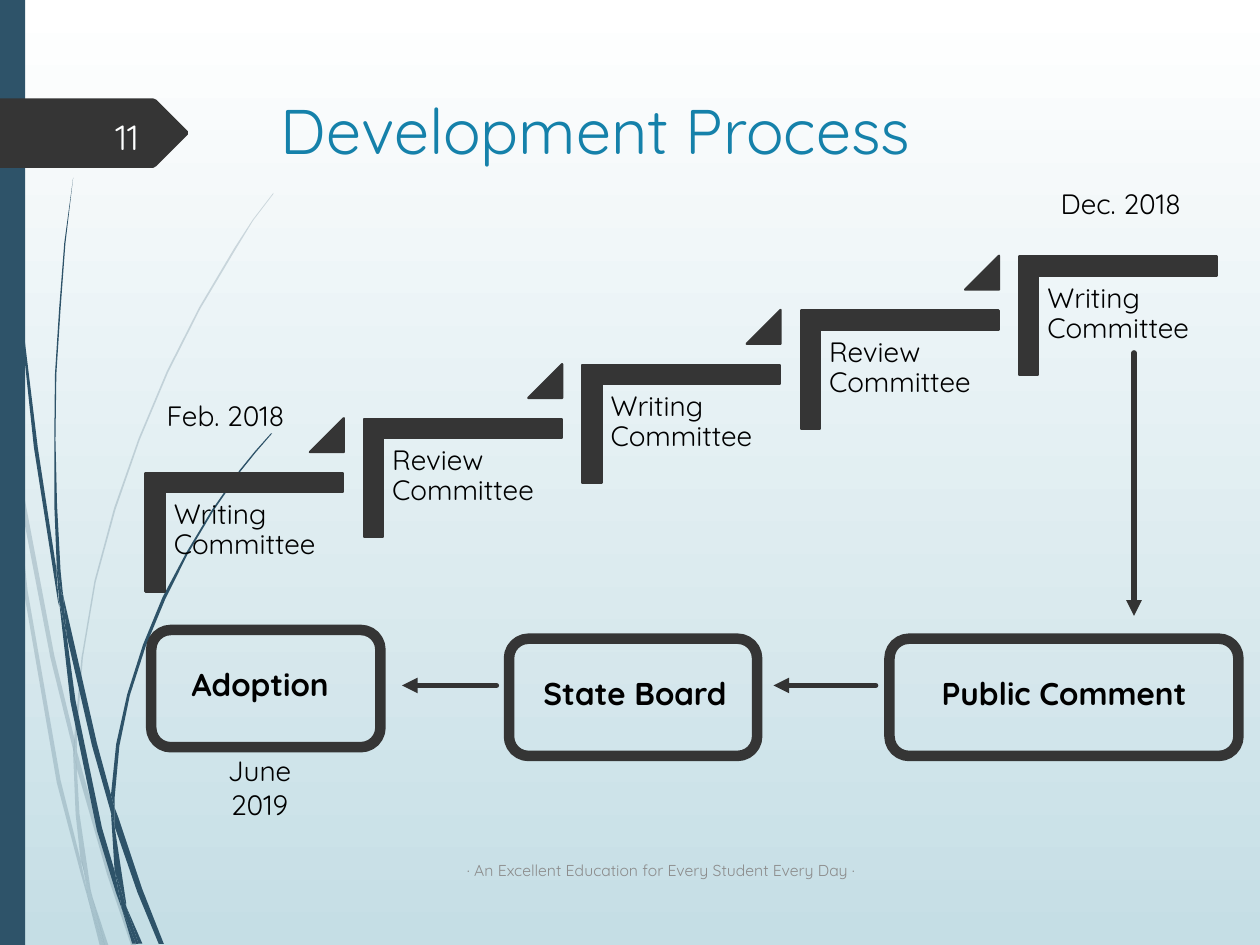
from pptx import Presentation
from pptx import util as u
from pptx.dml.color import RGBColor
from pptx.enum import shapes, text
from pptx.oxml import parse_xml
from pptx.oxml.ns import nsdecls

Pt = u.Pt
SHAPE = shapes.MSO_SHAPE
ALIGN = text.PP_ALIGN
ANCHOR = text.MSO_ANCHOR
COLORS = {
    "navy": "2E5369", "dark": "353535", "arrow": "333333", "title": "1581AA",
    "text": "000000", "number": "FEFFFF", "footer": "8C8C8C",
    "top": "FFFFFF", "bottom": "C5DEE5",
}

# Outlines of the grass blades, as x, y pairs
PALE_BLADES = [
    [5.8, 252, 4.3, 231.8, 0, 203, 0, 215.3, 5, 247.7],
    [28.8, 375.8, 42.5, 431.3, 42.5, 421.9, 31, 374.4, 7.2, 248.4, 8.6, 270.7],
    [46.1, 437, 43.9, 429.1, 43.9, 439.2, 61.2, 499.7, 74.9, 540, 77.8, 540,
     63.4, 498.2],
    [59.8, 540, 61.9, 540, 52.6, 511.9],
    [46.1, 491.8, 34.6, 445.7, 15.8, 337.7, 8.6, 270.7, 5.8, 252, 13.7, 338.4,
     32.4, 447.1, 46.1, 499, 50.4, 514.1, 49.7, 509],
    [41.8, 431.3, 43.2, 465.1, 46.1, 491.8, 48.2, 498.2, 52.6, 511.9,
     51.8, 508.3, 45.4, 465.1, 43.9, 439.2, 43.9, 437.8],
    [43.9, 420.5, 47.4, 375.8, 54.7, 332.6, 66, 291.2, 79.9, 251.3, 96.1, 212.8,
     114.5, 176.4, 134.6, 142.6, 144.7, 126, 156.2, 110.9, 156.2, 110.2,
     144.4, 125.6, 133.9, 141.8, 113.8, 175.7, 95.4, 212, 79.2, 250.6,
     65.2, 290.4, 54, 331.9, 46.6, 375.7, 42.5, 420.5, 42.5, 421.9, 43.9, 429.1],
    [50.4, 514.1, 56.9, 540, 59, 540],
    [43.9, 437.8, 43.9, 439.2, 43.9, 429.1, 42.5, 421.9, 41.8, 431.3],
    [48.2, 498.2, 46.8, 491.8, 49.7, 509, 50.4, 514.1, 59, 540, 59.8, 540,
     52.6, 511.9],
]
DARK_BLADES = [
    [3.6, 79.2, 10.1, 167.8, 19.4, 255.6, 33.1, 343.4, 33.8, 346.3, 32.4, 329,
     32.4, 326.2, 21.6, 255.6, 10.8, 167, 4.3, 78.5, 2.9, 34.6, 2.2, 0, 1.4, 0,
     2.2, 34.6],
    [52.6, 426.2, 63.4, 464.4, 63.4, 455.8, 63.4, 454.3, 55.4, 424.8,
     36, 339.8, 38.2, 363.6],
    [67.7, 467.3, 65.5, 461.5, 65.5, 472.3, 78.5, 509.8, 90.7, 539.3,
     93.6, 539.3, 81.4, 508.3],
    [65.5, 497.5, 58.3, 473, 43.2, 400.3, 38.2, 363.6, 33.8, 343.4, 40.3, 401,
     55.4, 474.5, 66.2, 509.8, 69.8, 519.8, 69.1, 516.2],
    [36, 339.8, 34.6, 326.2, 32.6, 288.7, 31.7, 251.3, 32.2, 213.8, 34.6, 176.4,
     37.4, 139, 41.8, 101.5, 36.7, 139, 33.8, 176.4, 31.4, 213.8, 31, 251.3,
     31, 288, 32.4, 323.3, 35.3, 339.8],
    [79.2, 539.3, 81.4, 539.3, 72, 517.7],
    [33.8, 343.4, 38.2, 363.6, 36, 339.8, 35.3, 339.8, 32.4, 323.3, 32.4, 326.2],
    [65.5, 455.8, 68.2, 426.3, 74.2, 397.4, 83.2, 369.5, 94.3, 342.7,
     107.2, 316.7, 121.7, 292.3, 137.5, 269.3, 146.2, 258.5, 155.5, 247.7,
     154.8, 247.7, 145.8, 257.8, 137, 268.6, 121, 291.6, 106.4, 315.9,
     92.9, 341.3, 81.7, 368.5, 72.7, 396.7, 66.4, 425.2, 63.4, 454.3,
     65.5, 461.5],
    [69.8, 519.8, 75.6, 539.3, 77.8, 539.3],
    [63.4, 464.4, 65.5, 497.5, 69.1, 508.3, 72, 517.7, 72, 515.5, 65.5, 472.3,
     64.8, 468.7],
    [63.4, 464.4, 64.8, 468.7, 65.5, 472.3, 65.5, 461.5, 63.4, 454.3],
    [69.1, 508.3, 65.5, 497.5, 69.1, 516.2, 69.8, 519.8, 77.8, 539.3,
     79.2, 539.3, 72, 517.7],
]
FLAG = [0, 56.2, 87.5, 56.2, 89.3, 57, 107.3, 74.9, 107.3, 77, 89.3, 95,
        87.5, 96, 0, 96]


def rgb(name):
    return RGBColor.from_string(COLORS[name])


class Deck:
    """Holds the text style and the slide being drawn."""
    font = {"name": "Quicksand", "size": Pt(16), "bold": False}

    def __init__(self, width, height):
        self.prs = Presentation()
        self.prs.slide_width, self.prs.slide_height = Pt(width), Pt(height)
        self.s = self.prs.slides.add_slide(self.prs.slide_layouts[6])

    def background(self, *names):
        fill = self.s.background.fill
        fill.gradient()
        fill.gradient_angle = 270
        for stop, name in zip(fill.gradient_stops, names):
            stop.color.rgb = rgb(name)

    def paint(self, sp, fill=None, line=None, width=1.25):
        sp.shadow.inherit = False
        if fill:
            sp.fill.solid()
            sp.fill.fore_color.rgb = rgb(fill)
        else:
            sp.fill.background()
        if line:
            sp.line.color.rgb = rgb(line)
            sp.line.width = Pt(width)
        else:
            sp.line.fill.background()

    def outline(self, flat, fill, alpha=None):
        """Draw a closed polygon from a flat x, y list; alpha is a percentage."""
        points = [(Pt(x), Pt(y)) for x, y in zip(flat[::2], flat[1::2])]
        fb = self.s.shapes.build_freeform(*points[0], scale=1)
        fb.add_line_segments(points[1:], close=True)
        sp = fb.convert_to_shape()
        self.paint(sp, fill)
        if alpha:
            color = sp._element.spPr.find(".//{*}srgbClr")
            color.append(parse_xml(
                f'<a:alpha {nsdecls("a")} val="{alpha * 1000}"/>'))

    def shape(self, kind, box, adjust=(), rotation=0, **style):
        sp = self.s.shapes.add_shape(kind, *map(Pt, box))
        sp.rotation = rotation
        for i, value in enumerate(adjust):
            sp.adjustments[i] = value
        self.paint(sp, **style)

    def label(self, words, box, color="text", align=ALIGN.CENTER,
              anchor=ANCHOR.TOP, inset=None, spacing=None, **font):
        tf = self.s.shapes.add_textbox(*map(Pt, box)).text_frame
        tf.word_wrap, tf.vertical_anchor = True, anchor
        if inset is not None:
            for side in ("left", "right", "top", "bottom"):
                setattr(tf, f"margin_{side}", Pt(inset))
        p = tf.paragraphs[0]
        p.alignment, p.line_spacing = align, spacing
        r = p.add_run()
        r.text = words
        for key, value in {**self.font, **font}.items():
            setattr(r.font, key, value)
        r.font.color.rgb = rgb(color)

    def arrow(self, *ends):
        c = self.s.shapes.add_connector(shapes.MSO_CONNECTOR.STRAIGHT,
                                        *map(Pt, ends))
        c.line.color.rgb = rgb("arrow")
        c.line.width = Pt(3)
        ln = c.line._get_or_add_ln()
        ln.set("cap", "rnd")
        ln.append(parse_xml(f'<a:tailEnd {nsdecls("a")} type="triangle"/>'))
        c._element.spPr.append(parse_xml(f'<a:effectLst {nsdecls("a")}/>'))


def main():
    d = Deck(720, 540)
    d.background("top", "bottom")
    for blade in PALE_BLADES:
        d.outline(blade, "navy", 20)
    for blade in DARK_BLADES:
        d.outline(blade, "navy")
    d.shape(SHAPE.RECTANGLE, (0, 0, 14.4, 540), fill="navy")
    d.outline(FLAG, "dark")
    d.label("11", (40.3, 63.4, 46.1, 28.8), "number", ALIGN.RIGHT,
            ANCHOR.MIDDLE, size=Pt(20))
    d.label("Development Process", (153.4, 49, 519, 59), "title", ALIGN.LEFT,
            size=Pt(36))

    solid = {"fill": "dark", "line": "dark"}
    reviewers = ["Writing", "Review", "Writing", "Review", "Writing"]
    for i, who in enumerate(reviewers):
        x, y = 124.8 * i, -30.95 * i
        d.shape(SHAPE.CORNER, (105.8 + x, 247.7 + y, 67.7, 113),
                (0.161, 0.161), 90, **solid)
        d.label(f"{who} Committee", (94.3 + x, 281 + y, 102.2, 89.3),
                align=ALIGN.LEFT, inset=5.04, spacing=0.9)
        if i < len(reviewers) - 1:
            d.shape(SHAPE.ISOSCELES_TRIANGLE,
                    (177.1 + x, 239 + y, 19.4, 19.4), (1,), **solid)

    for date, box in [("Feb. 2018", (86.4, 223.9, 85, 46)),
                      ("Dec. 2018", (596.9, 103, 87.1, 46)),
                      ("June 2019", (105.8, 427, 85, 46))]:
        d.label(date, box)

    stages = [("Public Comment", (508.3, 365, 199.4, 67), (520.6, 381.6, 175, 28.8)),
              ("State Board", (290.9, 365, 141.8, 67), (283.7, 381.6, 158.4, 28.8)),
              ("Adoption", (86.4, 360, 131, 67), (86.4, 376.6, 124.6, 28.8))]
    for name, frame, box in stages:
        d.shape(SHAPE.ROUNDED_RECTANGLE, frame, line="dark", width=6)
        d.label(name, box, size=Pt(18), bold=True)
    for ends in [(648, 201.6, 648, 352), (500.4, 391.7, 442, 391.7),
                 (283.7, 391.7, 229.7, 391.7)]:
        d.arrow(*ends)

    d.label("· An Excellent Education for Every Student Every Day ·",
            (152.6, 483, 450, 28.8), "footer", anchor=ANCHOR.MIDDLE, size=Pt(9))
    d.prs.save("out.pptx")


if __name__ == "__main__":
    main()
